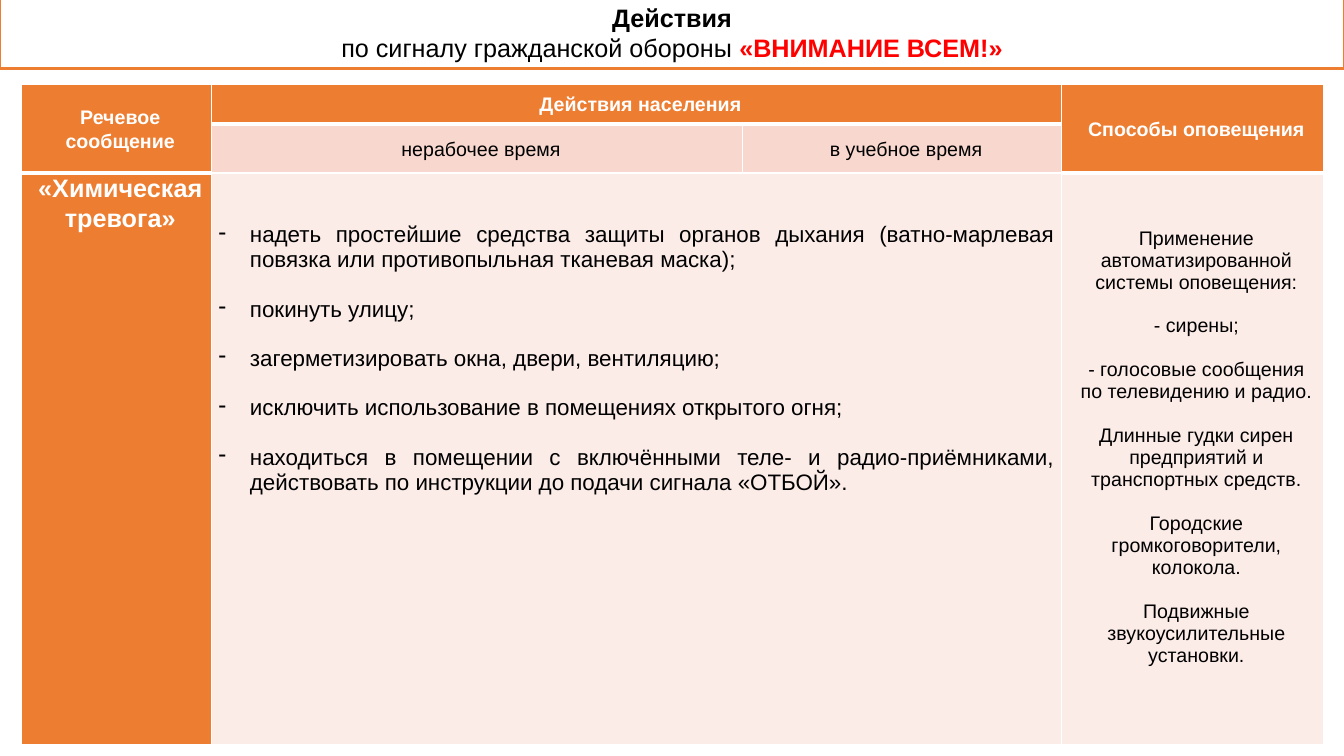
from lxml import etree
from pptx import Presentation
from pptx.dml.color import RGBColor
from pptx.enum.text import MSO_ANCHOR, MSO_AUTO_SIZE, PP_ALIGN
from pptx.oxml.ns import qn
from pptx.util import Cm, Pt

TOP, MIDDLE = MSO_ANCHOR.TOP, MSO_ANCHOR.MIDDLE
NO_AUTOFIT = MSO_AUTO_SIZE.NONE
CENTER, JUSTIFY = PP_ALIGN.CENTER, PP_ALIGN.JUSTIFY

WHITE = RGBColor(0xFF, 0xFF, 0xFF)
BLACK = RGBColor(0, 0, 0)
RED = RGBColor(0xFF, 0, 0)
ORANGE = RGBColor(0xED, 0x7D, 0x31)
PEACH = RGBColor(0xF8, 0xD7, 0xCE)
PALE = RGBColor(0xFC, 0xEC, 0xE8)

FONT = "Arial"
TITLE_ONLY = 5
COLUMNS = (4.8, 13.39, 8.03, 6.6)
ROWS = (0.99, 1.24, 14.4)

ACTIONS = (
    "надеть простейшие средства защиты органов дыхания (ватно-марлевая повязка или противопыльная тканевая маска);",
    "покинуть улицу;",
    "загерметизировать окна, двери, вентиляцию;",
    "исключить использование в помещениях открытого огня;",
    "находиться в помещении с включёнными теле- и радио-приёмниками, действовать по инструкции до подачи сигнала «ОТБОЙ».",
)
WARNINGS = (
    "Применение автоматизированной системы оповещения:",
    "- сирены;",
    "- голосовые сообщения по телевидению и радио.",
    "Длинные гудки сирен предприятий и транспортных средств.",
    "Городские громкоговорители, колокола.",
    "Подвижные звукоусилительные установки.",
)


def set_font(font, size, color, bold):
    font.name, font.size, font.bold = FONT, Pt(size), bold
    font.color.rgb = color


def add_title(slide, left, top, width, height):
    title = slide.shapes.title
    title.left, title.top, title.width, title.height = left, top, width, height
    title.fill.solid()
    title.fill.fore_color.rgb = WHITE
    color = title.fill._xPr.find(qn("a:solidFill"))[0]
    etree.SubElement(color, qn("a:alpha"), val="50000")
    title.line.color.rgb = ORANGE
    title.line.width = Pt(2)

    frame = title.text_frame
    frame.word_wrap = True
    frame.auto_size = NO_AUTOFIT
    frame.vertical_anchor = MIDDLE
    heading, signal = frame.paragraphs[0], frame.add_paragraph()
    heading.text = "Действия"
    heading.alignment = signal.alignment = CENTER
    set_font(heading.font, 18, BLACK, True)
    signal.font.name, signal.font.size = FONT, Pt(18)
    for text, color, bold in (
        ("по сигналу гражданской обороны ", BLACK, False),
        ("«ВНИМАНИЕ ВСЕМ!»", RED, True),
    ):
        span = signal.add_run()
        span.text = text
        span.font.color.rgb, span.font.bold = color, bold


def set_borders(cell, bottom):
    properties = cell._tc.get_or_add_tcPr()
    for side, points in (("lnL", 1), ("lnR", 1), ("lnB", bottom)):
        line = etree.SubElement(properties, qn(f"a:{side}"), w=str(Pt(points)))
        fill = etree.SubElement(line, qn("a:solidFill"))
        etree.SubElement(fill, qn("a:srgbClr"), val=str(WHITE))


def write_cell(cell, texts, size, color, bold=False, anchor=MIDDLE,
               spacing=1.07, gap=0, bulleted=False):
    cell.vertical_anchor = anchor
    cell.margin_left = cell.margin_right = Cm(0.18)
    cell.margin_top = cell.margin_bottom = 0
    frame = cell.text_frame
    for index, text in enumerate(texts):
        para = frame.add_paragraph() if index else frame.paragraphs[0]
        para.text = text
        para.alignment = JUSTIFY if bulleted else CENTER
        para.line_spacing = spacing
        if index:
            para.space_before = Pt(gap)
        properties = para._p.get_or_add_pPr()
        properties.set("marL", str(Cm(0.79 if bulleted else 0.2)))
        properties.set("indent", str(Cm(-0.79 if bulleted else 0)))
        if bulleted:
            etree.SubElement(properties, qn("a:buChar"), char="-")
        set_font(para.font, size, color, bold)


def add_actions_table(slide, left, top):
    table = slide.shapes.add_table(
        len(ROWS), len(COLUMNS), left, top, Cm(sum(COLUMNS)), Cm(sum(ROWS))
    ).table
    table.first_row = table.horz_banding = False
    for column, width in zip(table.columns, COLUMNS):
        column.width = Cm(width)
    for row, height in zip(table.rows, ROWS):
        row.height = Cm(height)

    fills = (
        (ORANGE, ORANGE, ORANGE, ORANGE),
        (ORANGE, PEACH, PEACH, ORANGE),
        (ORANGE, PALE, PALE, PALE),
    )
    for row, colors in enumerate(fills):
        for column, color in enumerate(colors):
            cell = table.cell(row, column)
            set_borders(cell, 3 if color == ORANGE and row < 2 else 1)
            cell.fill.solid()
            cell.fill.fore_color.rgb = color

    for start, end in (((0, 0), (1, 0)), ((0, 1), (0, 2)),
                       ((0, 3), (1, 3)), ((2, 1), (2, 2))):
        table.cell(*start).merge(table.cell(*end))

    for column, text in ((0, "Речевое сообщение"), (1, "Действия населения"),
                         (3, "Способы оповещения")):
        write_cell(table.cell(0, column), [text], 14, WHITE, bold=True)
    for column, text in ((1, "нерабочее время"), (2, "в учебное время")):
        write_cell(table.cell(1, column), [text], 14, BLACK)

    write_cell(table.cell(2, 0), ["«Химическая тревога»"], 18, WHITE,
               bold=True, anchor=TOP)
    actions, warnings = table.cell(2, 1), table.cell(2, 3)
    write_cell(actions, ACTIONS, 16, BLACK, anchor=TOP, spacing=1.0,
               gap=17.5, bulleted=True)
    actions.margin_top = Cm(1.25)
    write_cell(warnings, WARNINGS, 14, BLACK, spacing=1.0, gap=15.5)
    warnings.margin_bottom = Cm(0.6)


def main():
    deck = Presentation()
    deck.slide_width, deck.slide_height = Cm(33.87), Cm(19.05)
    slide = deck.slides.add_slide(deck.slide_layouts[TITLE_ONLY])
    add_title(slide, 0, Cm(-0.08), deck.slide_width, Cm(1.8))
    add_actions_table(slide, Cm(0.53), Cm(2.13))
    deck.save("out.pptx")


if __name__ == "__main__":
    main()
